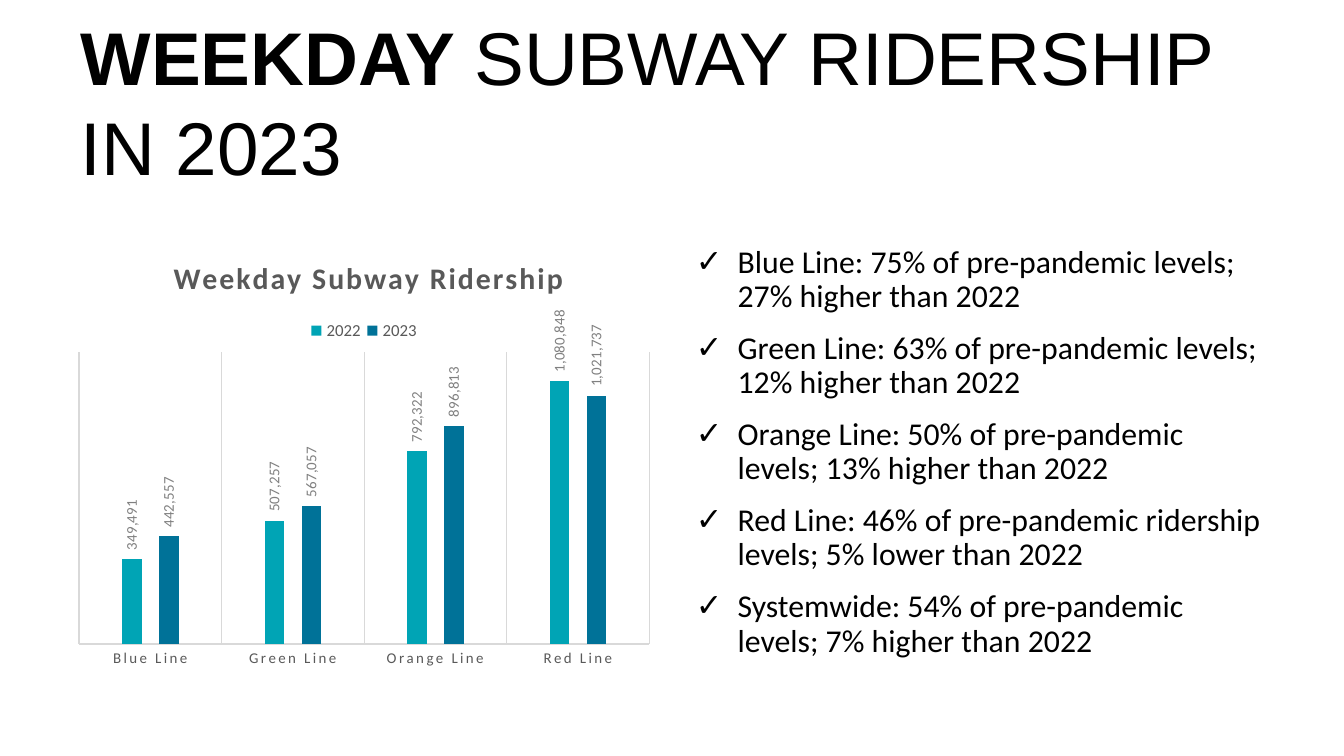
import pptx
import pptx.util
import pptx.chart.data
import pptx.dml.color
import pptx.enum.chart
import pptx.enum.text
import pptx.oxml
import pptx.oxml.ns

Pt, Inches = pptx.util.Pt, pptx.util.Inches
XL = pptx.enum.chart
qn = pptx.oxml.ns.qn

TITLE = [("WEEKDAY ", True), ("SUBWAY RIDERSHIP IN 2023", False)]
CHART_TITLE = "Weekday Subway Ridership"
LINES = ["Blue Line", "Green Line", "Orange Line", "Red Line"]
RIDERSHIP = {
    "2022": (349491, 507257, 792322, 1080848),
    "2023": (442557, 567057, 896813, 1021737),
}
BULLETS = [
    "Blue Line: 75% of pre-pandemic levels; 27% higher than 2022",
    "Green Line: 63% of pre-pandemic levels; 12% higher than 2022",
    "Orange Line: 50% of pre-pandemic levels; 13% higher than 2022",
    "Red Line: 46% of pre-pandemic ridership levels; 5% lower than 2022",
    "Systemwide: 54% of pre-pandemic levels; 7% higher than 2022",
]
COLORS = {"text": "000000", "2022": "00A4B5", "2023": "007298",
          "grid": "D9D9D9", "axis": "595959", "label": "808080"}
NUMBER = '_(* #,##0_);_(* \\(#,##0\\);_(* "-"??_);_(@_)'
W = 10
H = W * 9 / 16
MARGIN, GAP = 0.5, 0.16
COL_W = (W - 2 * MARGIN - GAP) / 2
BODY_TOP, BODY_H = 1.78, 3.24


def rgb(name):
    return pptx.dml.color.RGBColor.from_string(COLORS[name])


def apply(obj, **values):
    for name, value in values.items():
        setattr(obj, name, value)


def style(font, size, color, name="Calibri", bold=False):
    apply(font, size=Pt(size), name=name, bold=bold)
    font.color.rgb = rgb(color)


def column(i):
    return [Inches(v) for v in (MARGIN + i * (COL_W + GAP), BODY_TOP, COL_W, BODY_H)]


def place(element, index, target="", **shares):
    for old in element.findall(qn("c:layout")):
        element.remove(old)
    inner = f'<c:layoutTarget val="{target}"/>' if target else ""
    inner += "".join(f'<c:{k}Mode val="edge"/>' for k in "xy")
    inner += "".join(f'<c:{k} val="{v}"/>' for k, v in shares.items())
    element.insert(index, pptx.oxml.parse_xml(
        f'<c:layout {pptx.oxml.ns.nsdecls("c")}><c:manualLayout>{inner}'
        '</c:manualLayout></c:layout>'))


def add_title(s):
    sp = s.shapes.title
    apply(sp, left=Inches(MARGIN), top=Inches(0.28),
          width=Inches(W - 2 * MARGIN), height=Inches(0.94))
    tf = sp.text_frame
    apply(tf, word_wrap=True, auto_size=pptx.enum.text.MSO_AUTO_SIZE.NONE,
          vertical_anchor=pptx.enum.text.MSO_ANCHOR.MIDDLE)
    p = tf.paragraphs[0]
    p.alignment = pptx.enum.text.PP_ALIGN.LEFT
    for text, bold in TITLE:
        r = p.add_run()
        r.text = text
        style(r.font, 40, "text", "Arial", bold)


def add_bullets(s):
    tf = s.shapes.add_textbox(*column(1)).text_frame
    tf.word_wrap = True
    for i, text in enumerate(BULLETS):
        p = tf.add_paragraph() if i else tf.paragraphs[0]
        apply(p, line_spacing=0.9, space_before=Pt(3.4 if i else 0), space_after=Pt(6))
        pPr = p._p.get_or_add_pPr()
        pPr.set("marL", str(Inches(0.31)))
        pPr.set("indent", str(-Inches(0.31)))
        for tag in ('buFont typeface="Arial"', 'buChar char="✓"'):
            pPr.append(pptx.oxml.parse_xml(
                f'<a:{tag} {pptx.oxml.ns.nsdecls("a")}/>'))
        r = p.add_run()
        r.text = text
        style(r.font, 17, "text")


def add_ridership_chart(s):
    data = pptx.chart.data.CategoryChartData(number_format=NUMBER)
    data.categories = LINES
    for year, values in RIDERSHIP.items():
        data.add_series(year, values)
    chart = s.shapes.add_chart(XL.XL_CHART_TYPE.COLUMN_CLUSTERED, *column(0), data).chart
    style(chart.font, 10, "text")

    tf = chart.chart_title.text_frame
    tf.text = CHART_TITLE
    font = tf.paragraphs[0].runs[0].font
    style(font, 16, "axis", bold=True)
    font._rPr.set("spc", "120")
    place(chart.chart_title._element, 1, x=0.17, y=0.03)

    chart.has_legend = True
    apply(chart.legend, position=XL.XL_LEGEND_POSITION.TOP, include_in_layout=False)
    style(chart.legend.font, 9, "axis")
    place(chart.legend._element, 1, x=0.4, y=0.18, w=0.2, h=0.06)

    plot = chart.plots[0]
    apply(plot, gap_width=444, overlap=-90, vary_by_categories=False)
    for series in plot.series:
        series.format.fill.solid()
        series.format.fill.fore_color.rgb = rgb(series.name)
        labels = series.data_labels
        apply(labels, show_value=True, position=XL.XL_LABEL_POSITION.OUTSIDE_END,
              number_format=NUMBER, number_format_is_linked=False)
        style(labels.font, 8, "label")
        body = labels._element.find(qn("c:txPr")).find(qn("a:bodyPr"))
        body.set("rot", "-5400000")
        body.set("vert", "horz")

    axis = chart.category_axis
    apply(axis, major_tick_mark=XL.XL_TICK_MARK.NONE,
          minor_tick_mark=XL.XL_TICK_MARK.NONE, has_major_gridlines=True)
    style(axis.tick_labels.font, 8, "axis")
    axis.tick_labels.font._rPr.set("spc", "120")
    for line in (axis.format.line, axis.major_gridlines.format.line):
        line.width = Pt(0.75)
        line.color.rgb = rgb("grid")
    apply(chart.value_axis, visible=False, has_major_gridlines=False,
          minimum_scale=0, maximum_scale=1200000)
    place(chart._chartSpace.chart.plotArea, 0, "inner", x=0.02, y=0.26, w=0.96, h=0.67)


def main():
    prs = pptx.Presentation()
    apply(prs, slide_width=Inches(W), slide_height=Inches(H))
    s = prs.slides.add_slide(prs.slide_layouts[5])
    add_title(s)
    add_bullets(s)
    add_ridership_chart(s)
    prs.save("out.pptx")


if __name__ == "__main__":
    main()
